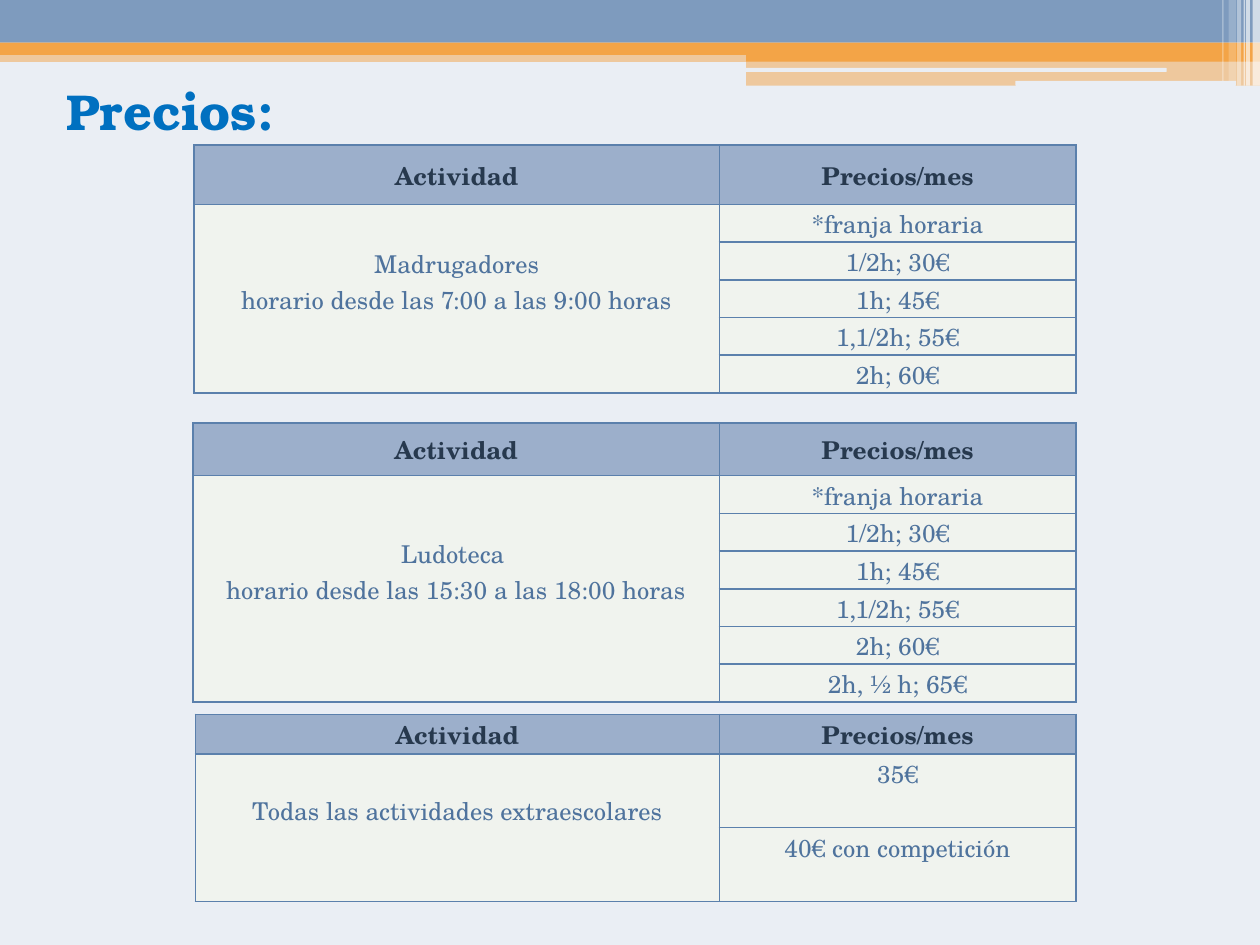
from lxml import etree
from pptx import Presentation
from pptx.dml.color import RGBColor
from pptx.enum.shapes import MSO_SHAPE
from pptx.enum.text import MSO_ANCHOR, MSO_AUTO_SIZE, PP_ALIGN
from pptx.oxml.ns import qn
from pptx.util import Cm, Pt

RECTANGLE = MSO_SHAPE.RECTANGLE
ROUNDED = MSO_SHAPE.ROUNDED_RECTANGLE
MIDDLE = MSO_ANCHOR.MIDDLE
CENTER, LEFT = PP_ALIGN.CENTER, PP_ALIGN.LEFT

COLORS = {
    "background": "EAEEF4", "blue": "7E9BBE", "orange": "F3A447",
    "white": "FFFFFF", "title": "0070C0", "border": "5B80AC",
    "header fill": "9CAFCB", "header text": "27394E",
    "body fill": "F0F3EE", "body text": "4F739D",
}
TITLE_FONT, TABLE_FONT = "TeX Gyre Bonum", "TeX Gyre Schola"
SLIDE_WIDTH, SLIDE_HEIGHT = 25.4, 19.05

# Banner: shape, left, top, width, height, colour, opacity in percent
BANNER = [
    (RECTANGLE, 0, 1.02, SLIDE_WIDTH, 0.23, "orange", 50),
    (RECTANGLE, 0, 0, SLIDE_WIDTH, 0.86, "blue", 100),
    (RECTANGLE, 0, 0.86, SLIDE_WIDTH, 0.25, "orange", 100),
    (RECTANGLE, 15.04, 0.99, 10.36, 0.25, "orange", 100),
    (RECTANGLE, 15.04, 1.22, 10.36, 0.51, "orange", 50),
    (ROUNDED, 15.01, 1.37, 8.51, 0.08, "background", 100),
    (ROUNDED, 20.47, 1.63, 4.45, 0.1, "background", 100),
]
# Vertical stripes at the right end: left, width, height, opacity
STRIPES = [
    (25.25, 0.15, 1.73, 65), (25.12, 0.08, 1.73, 65), (25.07, 0.03, 1.73, 60),
    (24.94, 0.08, 1.73, 40), (24.77, 0.15, 1.63, 20), (24.64, 0.03, 1.63, 30),
]

HEADERS = ["Actividad", "Precios/mes"]
HOURLY_PRICES = ["*franja horaria", "1/2h; 30€", "1h; 45€", "1,1/2h; 55€", "2h; 60€"]
LINE = 0.73  # height of one text line, kept free below raised text
INSET = 0.03
COLUMN_EDGE, RIGHT_EDGE = 14.5, 21.69

PRICE_TABLES = [
    dict(left=3.91, top=2.92, header=1.2, row=0.76, price_gap=0,
         activity="Madrugadores\vhorario desde las 7:00 a las 9:00 horas",
         prices=HOURLY_PRICES),
    dict(left=3.89, top=8.53, header=1.06, row=0.76, price_gap=0,
         activity="Ludoteca \vhorario desde las 15:30 a las 18:00 horas",
         prices=HOURLY_PRICES + ["2h, ½ h; 65€"]),
    dict(left=3.94, top=14.4, header=0.79, row=1.36, price_gap=LINE,
         activity="Todas las actividades extraescolares",
         prices=["35€", "40€ con competición"]),
]


def color(name):
    return RGBColor.from_string(COLORS[name])


def add_bar(slide, kind, left, top, width, height, fill, opacity):
    shape = slide.shapes.add_shape(kind, Cm(left), Cm(top), Cm(width), Cm(height))
    shape.shadow.inherit = False
    shape.line.fill.background()
    shape.fill.solid()
    shape.fill.fore_color.rgb = color(fill)
    if opacity < 100:
        rgb = shape.fill._xPr.find(".//" + qn("a:srgbClr"))
        etree.SubElement(rgb, qn("a:alpha"), val=str(opacity * 1000))


def format_cell(cell, kind):
    # Borders must precede the fill in the cell properties
    properties = cell._tc.get_or_add_tcPr()
    for side in ("a:lnL", "a:lnR", "a:lnT", "a:lnB"):
        line = etree.SubElement(properties, qn(side), w=str(Pt(1)))
        fill = etree.SubElement(line, qn("a:solidFill"))
        etree.SubElement(fill, qn("a:srgbClr"), val=COLORS["border"])
    cell.fill.solid()
    cell.fill.fore_color.rgb = color(kind + " fill")


def write_cell(cell, text, kind, gap=0):
    cell.text = text
    cell.vertical_anchor = MIDDLE
    cell.margin_left = cell.margin_right = cell.margin_top = Cm(INSET)
    cell.margin_bottom = Cm(gap)
    paragraph = cell.text_frame.paragraphs[0]
    paragraph.alignment = CENTER
    font = paragraph.font
    font.name, font.size = TABLE_FONT, Pt(14)
    font.bold = kind == "header"
    font.color.rgb = color(kind + " text")


def add_price_table(slide, data):
    prices = data["prices"]
    widths = [COLUMN_EDGE - data["left"], RIGHT_EDGE - COLUMN_EDGE]
    heights = [data["header"]] + [data["row"]] * len(prices)
    table = slide.shapes.add_table(
        len(heights), len(widths), Cm(data["left"]), Cm(data["top"]),
        Cm(sum(widths)), Cm(sum(heights))).table
    table.first_row = table.horz_banding = False
    for column, width in zip(table.columns, widths):
        column.width = Cm(width)
    for index, (row, height) in enumerate(zip(table.rows, heights)):
        row.height = Cm(height)
        for cell in row.cells:
            format_cell(cell, "body" if index else "header")

    for column, header in enumerate(HEADERS):
        write_cell(table.cell(0, column), header, "header")
    table.cell(1, 0).merge(table.cell(len(prices), 0))
    write_cell(table.cell(1, 0), data["activity"], "body", LINE)
    for row, price in enumerate(prices, start=1):
        write_cell(table.cell(row, 1), price, "body", data["price_gap"])


def main():
    presentation = Presentation()
    presentation.slide_width = Cm(SLIDE_WIDTH)
    presentation.slide_height = Cm(SLIDE_HEIGHT)
    slide = presentation.slides.add_slide(presentation.slide_layouts[5])
    slide.background.fill.solid()
    slide.background.fill.fore_color.rgb = color("background")

    # Banner
    for bar in BANNER:
        add_bar(slide, *bar)
    for left, width, height, opacity in STRIPES:
        add_bar(slide, RECTANGLE, left, 0, width, height, "white", opacity)

    # Title
    title = slide.shapes.title
    title.left, title.top, title.width, title.height = Cm(1.09), Cm(1.52), Cm(22.4), Cm(1.4)
    title.text_frame.text = "Precios:"
    title.text_frame.auto_size = MSO_AUTO_SIZE.NONE
    title.text_frame.vertical_anchor = MIDDLE
    paragraph = title.text_frame.paragraphs[0]
    paragraph.alignment = LEFT
    font = paragraph.font
    font.name, font.size, font.bold = TITLE_FONT, Pt(28.8), True
    font.color.rgb = color("title")

    # Price tables
    for data in PRICE_TABLES:
        add_price_table(slide, data)

    presentation.save("out.pptx")


if __name__ == "__main__":
    main()
